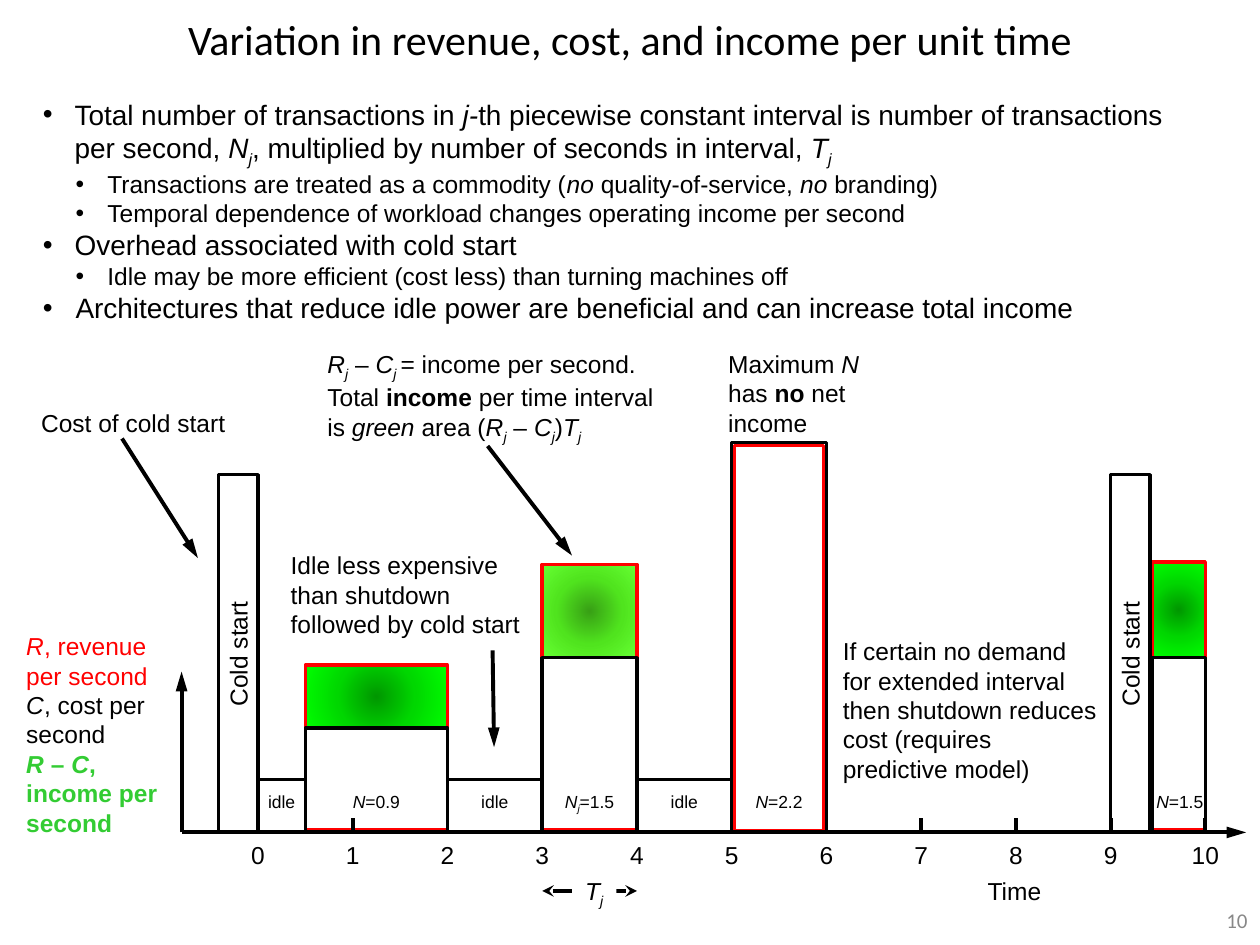
from lxml.etree import SubElement
from pptx import Presentation
from pptx.dml.color import RGBColor
from pptx.enum.shapes import MSO_CONNECTOR, MSO_SHAPE
from pptx.enum.text import MSO_ANCHOR, MSO_AUTO_SIZE, PP_ALIGN
from pptx.oxml.ns import qn
from pptx.util import Cm, Pt

BLACK, RED, GREEN, GREY, WHITE = "000000", "FF0000", "33CC33", "888888", "FFFFFF"
DEEP_GREEN = ("009700", "00D700", "00FF00")
LIGHT_GREEN = ("38A015", "50E41E", "66FF33")

# Time axis, in cm
ORIGIN, UNIT, BASELINE = 5.2, 1.91, 16.78
IDLE_HEIGHT, COLD_HEIGHT, COLD_WIDTH = 1.07, 7.21, 0.79

# Runs are (text, style): i italic, b bold, s subscript
NJ, TJ = [[(letter, "i"), ("j", "is")] for letter in "NT"]
RJ_MINUS_CJ = [("R", "i"), ("j", "is"), (" – ", ""), ("C", "i")]

# (bullet indent, hanging indent, size, runs)
BULLETS = [
    (0.64, 0.64, 16, [("Total number of transactions in ", ""), ("j-", "i"),
                      ("th piecewise constant interval is number of transactions per second, ", ""),
                      *NJ, (", multiplied by number of seconds in interval, ", ""), *TJ]),
    (1.3, 0.64, 14, [("Transactions are treated as a commodity (", ""), ("no", "i"),
                     (" quality-of-service, ", ""), ("no", "i"), (" branding)", "")]),
    (1.3, 0.64, 14, [("Temporal dependence of workload changes operating income per second", "")]),
    (0.64, 0.64, 16, [("Overhead associated with cold start", "")]),
    (1.3, 0.64, 14, [("Idle may be more efficient (cost less) than turning machines off", "")]),
    (0.66, 0.66, 16, [("Architectures that reduce idle power are beneficial "
                       "and can increase total income", "")]),
]

# (left, top, width, height, [(colour, runs) per paragraph])
CAPTIONS = [
    (6.35, 6.91, 7.57, 2.06, [(BLACK, [
        *RJ_MINUS_CJ, ("j ", "is"), ("= income per second. Total ", ""), ("income", "b"),
        (" per time interval is ", ""), ("green", "i"), (" area (", ""),
        *RJ_MINUS_CJ, ("j", "is"), (")", ""), *TJ])]),
    (0.58, 8.1, 4.47, 0.86, [(BLACK, [("Cost of cold start", "")])]),
    (14.43, 6.91, 3.33, 2.06, [(BLACK, [("Maximum ", ""), ("N", "i"), (" has ", ""),
                                        ("no", "b"), (" net income", "")])]),
    (5.61, 10.97, 5.2, 2.06, [(BLACK, [
        ("Idle less expensive than shutdown followed by cold start", "")])]),
    (0.28, 12.6, 3.58, 4.45, [
        (RED, [("R", "i"), (", revenue per second", "")]),
        (BLACK, [("C", "i"), (", cost per second", "")]),
        (GREEN, [("R", "bi"), (" – ", "b"), ("C", "bi"), (", income per second", "b")])]),
    (16.74, 12.7, 5.7, 3.25, [(BLACK, [
        ("If certain no demand for extended interval then shutdown reduces cost "
         "(requires predictive model)", "")])]),
]


def rgb(value):
    return RGBColor.from_string(value)


def at_time(t):
    return ORIGIN + UNIT * t


def write_runs(paragraph, runs, size, color=BLACK, font="Arial"):
    for text, style in runs:
        run = paragraph.add_run()
        run.text = text
        run.font.size, run.font.name = Pt(size), font
        run.font.color.rgb = rgb(color)
        run.font.italic, run.font.bold = "i" in style, "b" in style
        if "s" in style:
            run.font._element.set("baseline", "-25000")


def add_caption(slide, left, top, width, height, paragraphs):
    frame = slide.shapes.add_textbox(Cm(left), Cm(top), Cm(width), Cm(height)).text_frame
    frame.word_wrap = True
    for index, (color, runs) in enumerate(paragraphs):
        paragraph = frame.add_paragraph() if index else frame.paragraphs[0]
        write_runs(paragraph, runs, 14, color)


def add_label(slide, center, top, runs, size=14, width=1.6, rotation=0):
    """One unwrapped line, centred on a given x."""
    label = slide.shapes.add_textbox(Cm(center - width / 2), Cm(top), Cm(width),
                                     Cm(0.86 if size == 14 else 0.69))
    label.rotation = rotation
    label.text_frame.word_wrap = False
    label.text_frame.paragraphs[0].alignment = PP_ALIGN.CENTER
    write_runs(label.text_frame.paragraphs[0], runs, size)
    return label


def add_bar(slide, left, top, width, bottom, line=None, gradient=None):
    bar = slide.shapes.add_shape(MSO_SHAPE.RECTANGLE, Cm(left), Cm(top), Cm(width),
                                 Cm(bottom - top))
    bar.shadow.inherit = False
    if line:
        bar.line.color.rgb = rgb(line)
        bar.line.width = Pt(2)
    else:
        bar.line.fill.background()
    if not gradient:
        bar.fill.background()
        return
    # Circular gradient, dark in the centre
    bar.fill.gradient()
    grad = bar._element.spPr.find(qn("a:gradFill"))
    for child in list(grad):
        grad.remove(child)
    stops = SubElement(grad, qn("a:gsLst"))
    for position, color in zip((0, 50000, 100000), gradient):
        stop = SubElement(stops, qn("a:gs"), pos=str(position))
        SubElement(stop, qn("a:srgbClr"), val=color)
    circle = SubElement(grad, qn("a:path"), path="circle")
    SubElement(circle, qn("a:fillToRect"), l="50000", t="50000", r="50000", b="50000")


def add_income_bar(slide, left, right, revenue_top, cost_top, gradient):
    width = right - left
    add_bar(slide, left, revenue_top, width, cost_top, gradient=gradient)
    add_bar(slide, left, revenue_top, width, BASELINE - 0.06, RED)
    add_bar(slide, left, cost_top, width, BASELINE, BLACK)


def add_line(slide, x1, y1, x2, y2, head=None, tail=None):
    line = slide.shapes.add_connector(MSO_CONNECTOR.STRAIGHT, Cm(x1), Cm(y1), Cm(x2), Cm(y2))
    line.line.color.rgb = rgb(BLACK)
    line.line.width = Pt(2.25)
    for tag, kind in (("a:headEnd", head), ("a:tailEnd", tail)):
        if kind:
            SubElement(line.line._get_or_add_ln(), qn(tag), type=kind,
                       len="lg" if kind == "triangle" else "med")
    SubElement(line._element.spPr, qn("a:effectLst"))


def place(shape, left, top, width, height):
    shape.left, shape.top, shape.width, shape.height = Cm(left), Cm(top), Cm(width), Cm(height)
    shape.text_frame.auto_size = MSO_AUTO_SIZE.NONE


def add_headings(slide):
    title, body = slide.shapes.title, slide.placeholders[1]
    place(title, 0.94, 0.15, 23.52, 1.65)
    title.text_frame.vertical_anchor = MSO_ANCHOR.TOP
    write_runs(title.text_frame.paragraphs[0],
               [("Variation in revenue, cost, and income per unit time", "")], 24, font="Calibri")

    place(body, 0.61, 1.83, 23.8, 5.38)
    for index, (indent, hanging, size, runs) in enumerate(BULLETS):
        paragraph = body.text_frame.add_paragraph() if index else body.text_frame.paragraphs[0]
        paragraph.level = 1 if size == 14 else 0
        paragraph.space_before = Pt(0)
        props = paragraph._p.get_or_add_pPr()
        props.set("marL", str(Cm(indent)))
        props.set("indent", str(-Cm(hanging)))
        SubElement(props, qn("a:buFont"), typeface="Arial")
        SubElement(props, qn("a:buChar"), char="•")
        write_runs(paragraph, runs, size)

    page = slide.shapes.add_textbox(Cm(19.69), Cm(18.03), Cm(5.71), Cm(1.02)).text_frame
    page.word_wrap = True
    page.vertical_anchor = MSO_ANCHOR.MIDDLE
    page.paragraphs[0].alignment = PP_ALIGN.RIGHT
    write_runs(page.paragraphs[0], [("10", "")], 12, GREY, "Calibri")


def add_bars(slide):
    # Idle intervals
    for start, end in ((0, 0.5), (2, 3), (4, 5)):
        add_bar(slide, at_time(start), BASELINE - IDLE_HEIGHT, UNIT * (end - start),
                BASELINE, BLACK)
        add_label(slide, at_time((start + end) / 2), 15.82, [("idle", "")], 10)
    # Busy intervals with income, then the one without
    last_start = at_time(9) + COLD_WIDTH + 0.04
    add_income_bar(slide, at_time(0.5), at_time(2), 13.41, 14.68, DEEP_GREEN)
    add_income_bar(slide, at_time(3), at_time(4), 11.38, 13.26, LIGHT_GREEN)
    add_income_bar(slide, last_start, at_time(10), 11.33, 13.26, DEEP_GREEN)
    add_bar(slide, at_time(5) + 0.06, 8.98, UNIT - 0.12, BASELINE - 0.04, RED)
    add_bar(slide, at_time(5), 8.92, UNIT, BASELINE, BLACK)
    n = [("N", "i")]
    for middle, symbol, value in ((1.25, n, "0.9"), (3.5, NJ, "1.5"),
                                  (5.5, n, "2.2"), (9.73, n, "1.5")):
        add_label(slide, at_time(middle), 15.82, symbol + [("=" + value, "")], 10)
    # Cold starts
    for left in (at_time(0) - COLD_WIDTH, at_time(9)):
        add_bar(slide, left, BASELINE - COLD_HEIGHT, COLD_WIDTH, BASELINE, BLACK)
        add_label(slide, left + COLD_WIDTH / 2, 12.75, [("Cold start", "")],
                  width=2.64, rotation=270)


def add_axes(slide):
    add_line(slide, 3.66, BASELINE, 25.12, BASELINE, tail="triangle")
    add_line(slide, 3.66, BASELINE, 3.66, 13.54, tail="triangle")
    for t in range(11):
        add_label(slide, at_time(t), 16.81, [(str(t), "")])
    for t in (1, 7, 8, 9, 10):
        add_line(slide, at_time(t), BASELINE, at_time(t), BASELINE - 0.3)
    add_label(slide, 20.45, 17.53, [("Time", "")], width=2.2)
    # Interval length, its label interrupting the arrow
    add_line(slide, at_time(3), 17.96, at_time(4), 17.96, head="stealth", tail="stealth")
    interval = add_label(slide, 11.98, 17.53, TJ, width=0.89)
    interval.fill.solid()
    interval.fill.fore_color.rgb = rgb(WHITE)


def main():
    deck = Presentation()
    deck.slide_width, deck.slide_height = Cm(25.4), Cm(19.05)
    slide = deck.slides.add_slide(deck.slide_layouts[1])
    add_headings(slide)
    add_bars(slide)
    add_axes(slide)
    for caption in CAPTIONS:
        add_caption(slide, *caption)
    # Pointers from captions to bars
    for pointer in ((9.83, 8.99, 11.53, 11.2), (2.46, 8.84, 3.99, 11.25),
                    (9.93, 13.11, 9.96, 15.06)):
        add_line(slide, *pointer, tail="triangle")
    deck.save("out.pptx")


if __name__ == "__main__":
    main()
